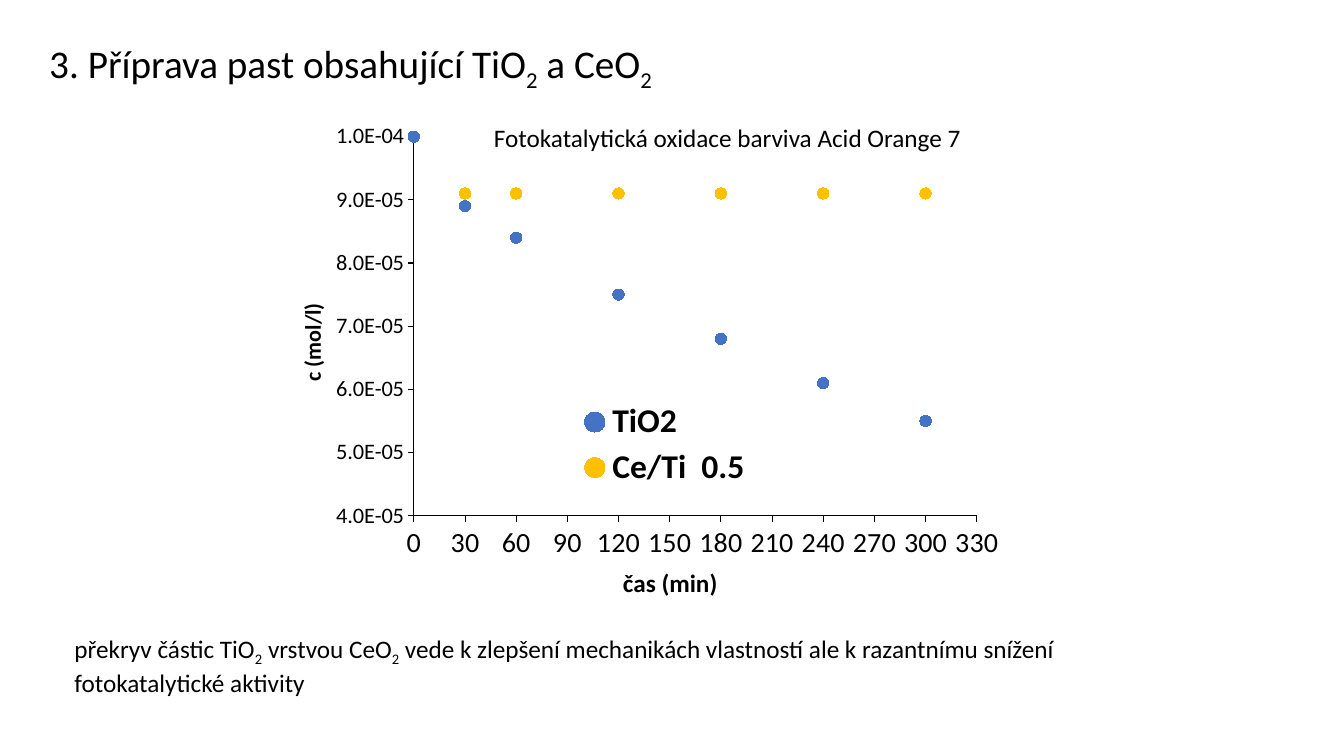
from dataclasses import dataclass

from lxml.etree import SubElement
from pptx import Presentation
from pptx.chart.chart import Chart
from pptx.chart.data import XyChartData
from pptx.dml.color import RGBColor
from pptx.enum.chart import (XL_CHART_TYPE, XL_LEGEND_POSITION, XL_MARKER_STYLE,
                             XL_TICK_LABEL_POSITION, XL_TICK_MARK)
from pptx.enum.text import MSO_ANCHOR
from pptx.oxml.ns import qn
from pptx.slide import Slide
from pptx.text.text import Font
from pptx.util import Inches, Pt

FONT = "Calibri"
BLACK = "000000"


@dataclass
class Label:
    """Text with every second piece in subscript."""
    at: tuple[float, float, float, float]
    pieces: list[str]
    size: int
    wrap: bool = True
    anchor: MSO_ANCHOR = MSO_ANCHOR.TOP
    spacing: float = 1.0


@dataclass
class Measurement:
    name: str
    color: str
    concentrations: list[float]


@dataclass
class AxisStyle:
    title: str
    title_size: int
    title_place: dict[str, float]
    tick_size: int
    scale: dict[str, float]
    number_format: str


LABELS = [
    Label((0.39, 0.11, 11.5, 1.05), ["3. Příprava past obsahující TiO", "2", " a CeO", "2"],
          28, anchor=MSO_ANCHOR.MIDDLE, spacing=0.9),
    Label((4.8, 1.16, 4.88, 0.4), ["Fotokatalytická oxidace barviva Acid Orange 7"],
          18, wrap=False),
    Label((0.64, 6.23, 11, 0.71),
          ["překryv částic TiO", "2", " vrstvou CeO", "2",
           " vede k zlepšení mechanikách vlastností ale k razantnímu snížení "
           "fotokatalytické aktivity"], 18),
]

TIMES = [0, 30, 60, 120, 180, 240, 300]
MEASUREMENTS = [
    Measurement("TiO2", "4472C4", [1e-4, 8.9e-5, 8.4e-5, 7.5e-5, 6.8e-5, 6.1e-5, 5.5e-5]),
    Measurement("Ce/Ti  0.5", "FFC000", [1e-4] + [9.1e-5] * 6),
]

TIME_AXIS = AxisStyle(
    "čas (min)", 18, {"x": 0.43, "y": 0.92}, 20,
    {"minimum_scale": 0, "maximum_scale": 330, "major_unit": 30}, "General")
CONCENTRATION_AXIS = AxisStyle(
    "c (mol/l)", 16, {"x": 0.01, "y": 0.38}, 16,
    {"minimum_scale": 4e-5, "maximum_scale": 1e-4, "major_unit": 1e-5}, "0.0E+00")


def rgb(color: str) -> RGBColor:
    return RGBColor.from_string(color)


def set_all(target, values: dict) -> None:
    for name, value in values.items():
        setattr(target, name, value)


def style_font(font: Font, size: int, bold: bool = False) -> None:
    set_all(font, {"name": FONT, "size": Pt(size), "bold": bold})
    font.color.rgb = rgb(BLACK)


def place(parent, index: int, position: dict[str, float], inner: bool = False) -> None:
    """Give a chart part a manual layout in fractions of the chart."""
    for old in parent.findall(qn("c:layout")):
        parent.remove(old)
    layout = SubElement(parent, qn("c:layout"))
    parent.insert(index, layout)
    manual = SubElement(layout, qn("c:manualLayout"))
    values = {"layoutTarget": "inner"} if inner else {}
    values |= {"xMode": "edge", "yMode": "edge"} | position
    for tag, value in values.items():
        SubElement(manual, qn(f"c:{tag}")).set("val", str(value))


def add_label(page: Slide, label: Label) -> None:
    box = page.shapes.add_textbox(*map(Inches, label.at))
    set_all(box.text_frame, {"word_wrap": label.wrap, "vertical_anchor": label.anchor})
    para = box.text_frame.paragraphs[0]
    para.line_spacing = label.spacing
    for number, piece in enumerate(label.pieces):
        span = para.add_run()
        span.text = piece
        style_font(span.font, label.size)
        if number % 2:
            span.font._element.set("baseline", "-25000")


def style_axis(axis, style: AxisStyle) -> None:
    set_all(axis, style.scale | {
        "has_major_gridlines": False, "has_minor_gridlines": False,
        "major_tick_mark": XL_TICK_MARK.OUTSIDE, "minor_tick_mark": XL_TICK_MARK.NONE,
        "tick_label_position": XL_TICK_LABEL_POSITION.LOW})
    set_all(axis.tick_labels, {"number_format": style.number_format,
                               "number_format_is_linked": False})
    style_font(axis.tick_labels.font, style.tick_size)
    axis.format.line.color.rgb = rgb(BLACK)
    axis.format.line.width = Pt(0.75)
    frame = axis.axis_title.text_frame
    frame.text = style.title
    style_font(frame.paragraphs[0].runs[0].font, style.title_size, bold=True)
    place(axis.axis_title._element, 1, style.title_place)


def add_legend(chart: Chart) -> None:
    chart.has_legend = True
    set_all(chart.legend, {"position": XL_LEGEND_POSITION.RIGHT, "include_in_layout": False})
    style_font(chart.legend.font, 24, bold=True)
    place(chart.legend._element, 1, {"x": 0.38, "y": 0.58, "w": 0.22, "h": 0.2})


def add_oxidation_chart(page: Slide) -> None:
    data = XyChartData()
    for measurement in MEASUREMENTS:
        series = data.add_series(measurement.name)
        for time, concentration in zip(TIMES, measurement.concentrations):
            series.add_data_point(time, concentration)
    chart = page.shapes.add_chart(
        XL_CHART_TYPE.XY_SCATTER, *map(Inches, (2.83, 1.16, 7.68, 4.85)), data).chart
    chart.has_title = False
    style_font(chart.font, 10)

    # Point markers without joining lines
    plot = chart.plots[0]
    plot.vary_by_categories = False
    for series, measurement in zip(plot.series, MEASUREMENTS):
        series.format.line.fill.background()
        set_all(series.marker, {"style": XL_MARKER_STYLE.CIRCLE, "size": 8})
        for part in (series.marker.format.fill, series.marker.format.line.fill):
            part.solid()
            part.fore_color.rgb = rgb(measurement.color)

    # Axes, legend and plot area
    style_axis(chart.category_axis, TIME_AXIS)
    style_axis(chart.value_axis, CONCENTRATION_AXIS)
    add_legend(chart)
    plot_area = chart._chartSpace.find(".//" + qn("c:plotArea"))
    place(plot_area, 0, {"x": 0.166, "y": 0.041, "w": 0.727, "h": 0.786}, inner=True)


def main() -> None:
    deck = Presentation()
    set_all(deck, {"slide_width": Inches(13.33), "slide_height": Inches(7.5)})
    page = deck.slides.add_slide(deck.slide_layouts[6])
    add_oxidation_chart(page)
    for label in LABELS:
        add_label(page, label)
    deck.save("out.pptx")


if __name__ == "__main__":
    main()
